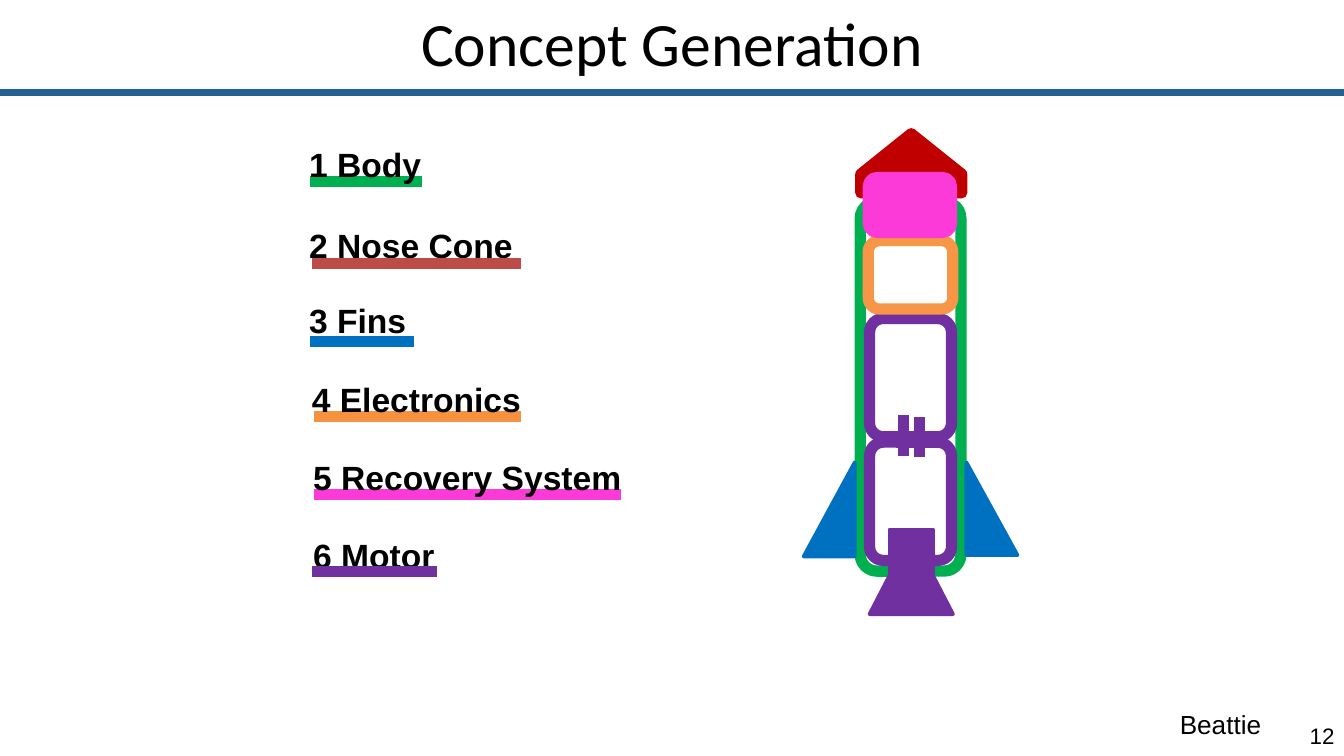
"""Build the Concept Generation slide: a colour-keyed parts list beside a rocket diagram."""
import dataclasses

import lxml.etree
import pptx
import pptx.dml.color
import pptx.enum.shapes
import pptx.enum.text
import pptx.oxml.ns
import pptx.util

Inches = pptx.util.Inches
Kind = pptx.enum.shapes.MSO_SHAPE
Align = pptx.enum.text.PP_ALIGN
Anchor = pptx.enum.text.MSO_ANCHOR


@dataclasses.dataclass(frozen=True)
class Theme:
    """Colours, type sizes, fonts and line widths."""
    rule: str = "236192"
    ink: str = "000000"
    body: str = "00B050"
    cone: str = "C00000"
    cone_key: str = "BD4B48"
    fins: str = "0070C0"
    electronics: str = "F79646"
    electronics_key: str = "F5913F"
    recovery: str = "FC3AD7"
    motor: str = "7030A0"
    heading_font: str = "Calibri"
    text_font: str = "Arial"
    title_size: float = 33
    label_size: float = 18
    author_size: float = 14
    number_size: float = 12
    rule_width: float = 3.5
    thick: float = 6
    thin: float = 2


class SlideBuilder:
    """Hold the theme and the current slide, and add elements to it."""

    def __init__(self, slide, theme):
        self.slide = slide
        self.theme = theme

    def color(self, value):
        return pptx.dml.color.RGBColor.from_string(value)

    def apply(self, target, values):
        for name, value in values.items():
            setattr(target, name, value)

    def line(self, start, end, color, width):
        connector = self.slide.shapes.add_connector(
            pptx.enum.shapes.MSO_CONNECTOR.STRAIGHT,
            *(Inches(value) for value in (*start, *end)))
        connector.line.color.rgb = self.color(color)
        connector.line.width = pptx.util.Pt(width)
        lxml.etree.SubElement(connector._element.spPr, pptx.oxml.ns.qn("a:effectLst"))

    def shape(self, kind, box, color, width, filled=True, rotation=0, adjustment=None):
        shape = self.slide.shapes.add_shape(kind, *(Inches(value) for value in box))
        shape.shadow.inherit = False
        shape.rotation = rotation
        if adjustment is not None:
            shape.adjustments[0] = adjustment
        if filled:
            shape.fill.solid()
            shape.fill.fore_color.rgb = self.color(color)
        else:
            shape.fill.background()
        shape.line.color.rgb = self.color(color)
        shape.line.width = pptx.util.Pt(width)

    def rounded(self, box, color, filled=False):
        self.shape(Kind.ROUNDED_RECTANGLE, box, color, self.theme.thick, filled, adjustment=0.167)

    def text(self, words, box, size, font=None, bold=False, align=Align.LEFT,
             anchor=Anchor.TOP, margins=(0.07, 0.04), indent=0):
        frame = self.slide.shapes.add_textbox(*(Inches(value) for value in box)).text_frame
        across, down = (Inches(value) for value in margins)
        self.apply(frame, {"word_wrap": True, "vertical_anchor": anchor,
                           "margin_left": across, "margin_right": across,
                           "margin_top": down, "margin_bottom": down})
        paragraph = frame.paragraphs[0]
        paragraph.alignment = align
        if indent:
            paragraph._p.get_or_add_pPr().set("marL", str(Inches(indent)))
        run = paragraph.add_run()
        run.text = words
        self.apply(run.font, {"name": font or self.theme.text_font,
                              "size": pptx.util.Pt(size), "bold": bold})
        run.font.color.rgb = self.color(self.theme.ink)

    def label(self, words, box, indent, key, color, key_on_top):
        left, right, height = key
        steps = [
            lambda: self.line((left, height), (right, height), color, self.theme.thick),
            lambda: self.text(words, box, self.theme.label_size, bold=True, indent=indent),
        ]
        for step in reversed(steps) if key_on_top else steps:
            step()


def main():
    theme = Theme()
    presentation = pptx.Presentation()
    presentation.slide_width = Inches(10)
    presentation.slide_height = Inches(10) * 9 // 16
    slide = presentation.slides.add_slide(presentation.slide_layouts[6])
    builder = SlideBuilder(slide, theme)

    builder.line((0, 0.69), (10, 0.69), theme.rule, theme.rule_width)
    builder.text("12", (9.5, 5.32, 0.5, 0.3), theme.number_size,
                 align=Align.RIGHT, anchor=Anchor.MIDDLE)

    labels = [
        ("1 Body", (2.23, 1.03, 1.11, 0.5), 0, (2.31, 3.14, 1.35), theme.body, False),
        ("2 Nose Cone", (2.23, 1.63, 1.75, 0.48), 0, (2.32, 3.88, 1.96), theme.cone_key, True),
        ("3 Fins", (2.23, 2.19, 0.92, 0.48), 0, (2.31, 3.08, 2.54), theme.fins, True),
        ("4 Electronics", (2.12, 2.78, 1.85, 0.48), 0.13, (2.34, 3.88, 3.1),
         theme.electronics_key, False),
        ("5 Recovery System", (2.13, 3.36, 2.58, 0.49), 0.13, (2.34, 4.62, 3.68),
         theme.recovery, False),
        ("6 Motor", (2.13, 3.94, 1.29, 0.47), 0.13, (2.32, 3.25, 4.25), theme.motor, True),
    ]
    for label in labels:
        builder.label(*label)

    builder.rounded((6.4, 1.5, 0.75, 2.75), theme.body)
    builder.shape(Kind.PENTAGON, (6.56, 0.84, 0.44, 0.75), theme.cone, theme.thick,
                  rotation=270, adjustment=0.683)
    for top in (3.29, 2.37):
        builder.rounded((6.47, top, 0.61, 0.88), theme.motor)
    for left, top in ((6.72, 3.09), (6.84, 3.1)):
        builder.line((left, top), (left, top + 0.3), theme.motor, theme.thick)
    for box, rotation in (((7.19, 3.44, 0.38, 0.69), 0), ((5.82, 3.6, 0.7, 0.38), 270)):
        builder.shape(Kind.RIGHT_TRIANGLE, box, theme.fins, theme.thin, rotation=rotation)
    builder.shape(Kind.ISOSCELES_TRIANGLE, (6.47, 3.97, 0.62, 0.6), theme.motor, theme.thin)
    builder.shape(Kind.RECTANGLE, (6.62, 3.94, 0.32, 0.4), theme.motor, theme.thin)
    builder.rounded((6.46, 1.79, 0.63, 0.51), theme.electronics)
    builder.rounded((6.46, 1.32, 0.62, 0.41), theme.recovery, filled=True)

    builder.text("Concept Generation", (1.83, -0.01, 6.34, 0.66), theme.title_size,
                 font=theme.heading_font, align=Align.CENTER, margins=(0.1, 0.05))
    builder.text("Beattie", (8.68, 5.22, 0.93, 0.34), theme.author_size, margins=(0.1, 0.05))
    presentation.save("out.pptx")


if __name__ == "__main__":
    main()
